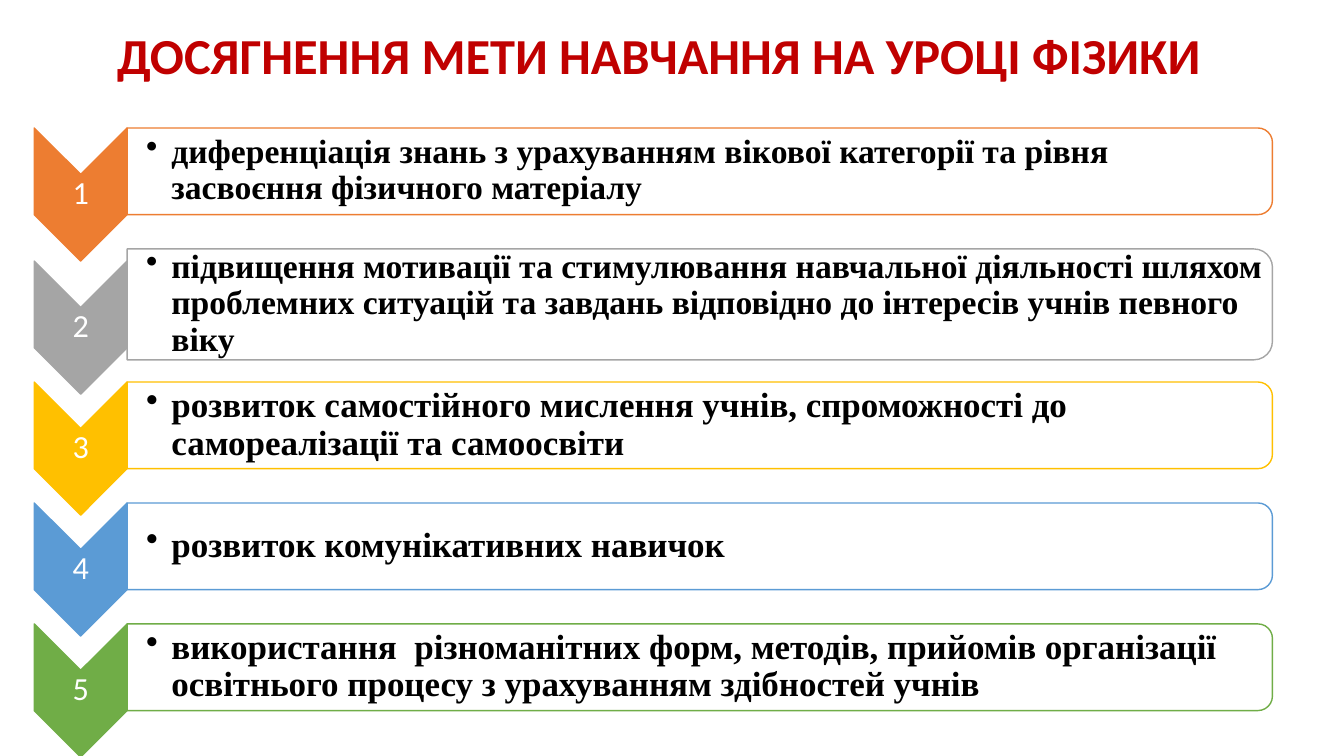
from lxml import etree
from pptx import Presentation
from pptx.dml.color import RGBColor
from pptx.enum.shapes import MSO_SHAPE
from pptx.enum.text import MSO_ANCHOR, PP_ALIGN
from pptx.oxml.ns import qn
from pptx.util import Inches, Pt

CHEVRON = MSO_SHAPE.CHEVRON
PANEL = MSO_SHAPE.ROUND_2_SAME_RECTANGLE
MIDDLE = MSO_ANCHOR.MIDDLE
CENTER = PP_ALIGN.CENTER

LEFT, TOP, WIDTH = 0.34, 1.27, 12.28
PITCH, LOW, HIGH = 1.2, 0.86, 1.1
ARROW_W, ARROW_H = 0.92, 1.32

# Colour, panel height, text size, text
GOALS = [
    ("ED7D31", LOW, 24, "диференціація знань з урахуванням вікової категорії "
     "та рівня засвоєння фізичного матеріалу"),
    ("A5A5A5", HIGH, 24, "підвищення мотивації та стимулювання навчальної діяльності "
     "шляхом проблемних ситуацій та завдань відповідно до інтересів учнів певного віку"),
    ("FFC000", LOW, 25, "розвиток самостійного мислення учнів, спроможності "
     "до самореалізації та самоосвіти"),
    ("5B9BD5", LOW, 25, "розвиток комунікативних навичок"),
    ("70AD47", LOW, 25, "використання  різноманітних форм, методів, прийомів "
     "організації освітнього процесу з урахуванням здібностей учнів"),
]


def paint(fmt, color):
    fmt.solid()
    fmt.fore_color.rgb = RGBColor.from_string(color)


def add_turned(slide, kind, x, y, w, h, fill, line):
    """Add a shape turned by 90 degrees that covers the box x, y, w, h."""
    shape = slide.shapes.add_shape(
        kind, Inches(x + (w - h) / 2), Inches(y + (h - w) / 2), Inches(h), Inches(w))
    shape.rotation = 90
    shape.shadow.inherit = False
    paint(shape.fill, fill)
    paint(shape.line.fill, line)
    shape.line.width = Pt(1)
    return shape


def add_text(slide, x, y, w, h, text, font, size, color, bold=False,
             align=None, inset=None, bullet=False):
    box = slide.shapes.add_textbox(Inches(x), Inches(y), Inches(w), Inches(h))
    frame = box.text_frame
    frame.word_wrap = True
    if inset is not None:
        frame.vertical_anchor = MIDDLE
        frame.margin_left = Inches(inset)
        frame.margin_right = frame.margin_top = frame.margin_bottom = Inches(0.02)
    para = frame.paragraphs[0]
    para.text = text
    if align is not None:
        para.alignment = align
    if bullet:
        para.level = 1
        props = para._p.get_or_add_pPr()
        props.set("marL", str(Inches(0.25)))
        props.set("indent", str(-Inches(0.25)))
        etree.SubElement(props, qn("a:buChar")).set("char", "•")
    if inset is not None:
        para.line_spacing = 0.9
    para.font.name = font
    para.font.size = Pt(size)
    para.font.bold = bold
    paint(para.font.fill, color)


def add_goal(slide, x, y, w, h, number, color, size, text):
    # Numbered chevron
    top = y + (h - LOW) / 2
    add_turned(slide, CHEVRON, x, top, ARROW_W, ARROW_H, color, color)
    add_text(slide, x, top + ARROW_W / 2, ARROW_W, 0.4, str(number),
             "Calibri", 23, "FFFFFF", align=CENTER, inset=0.02)

    # Panel with its goal
    left, wide = x + ARROW_W, w - ARROW_W
    panel = add_turned(slide, PANEL, left, y, wide, h, "FFFFFF", color)
    tint = panel._element.spPr.find(qn("a:solidFill"))[0]
    etree.SubElement(tint, qn("a:alpha")).set("val", "90000")
    add_text(slide, left, y + 0.04, wide - 0.04, h - 0.09, text,
             "Times New Roman", size, "000000", bold=True, inset=0.19, bullet=True)


def add_goals(slide, x, y, w):
    for number, (color, high, size, text) in enumerate(GOALS, 1):
        add_goal(slide, x, y, w, high, number, color, size, text)
        y += PITCH + (high - LOW) / 2


def main():
    deck = Presentation()
    deck.slide_width, deck.slide_height = Inches(13.33), Inches(7.5)
    slide = deck.slides.add_slide(deck.slide_layouts[6])
    add_text(slide, 0.46, 0.19, 12.27, 0.71, "ДОСЯГНЕННЯ МЕТИ НАВЧАННЯ НА УРОЦІ ФІЗИКИ ",
             "Calibri", 36, "C00000", bold=True, align=CENTER)
    add_goals(slide, LEFT, TOP, WIDTH)
    deck.save("out.pptx")


if __name__ == "__main__":
    main()
